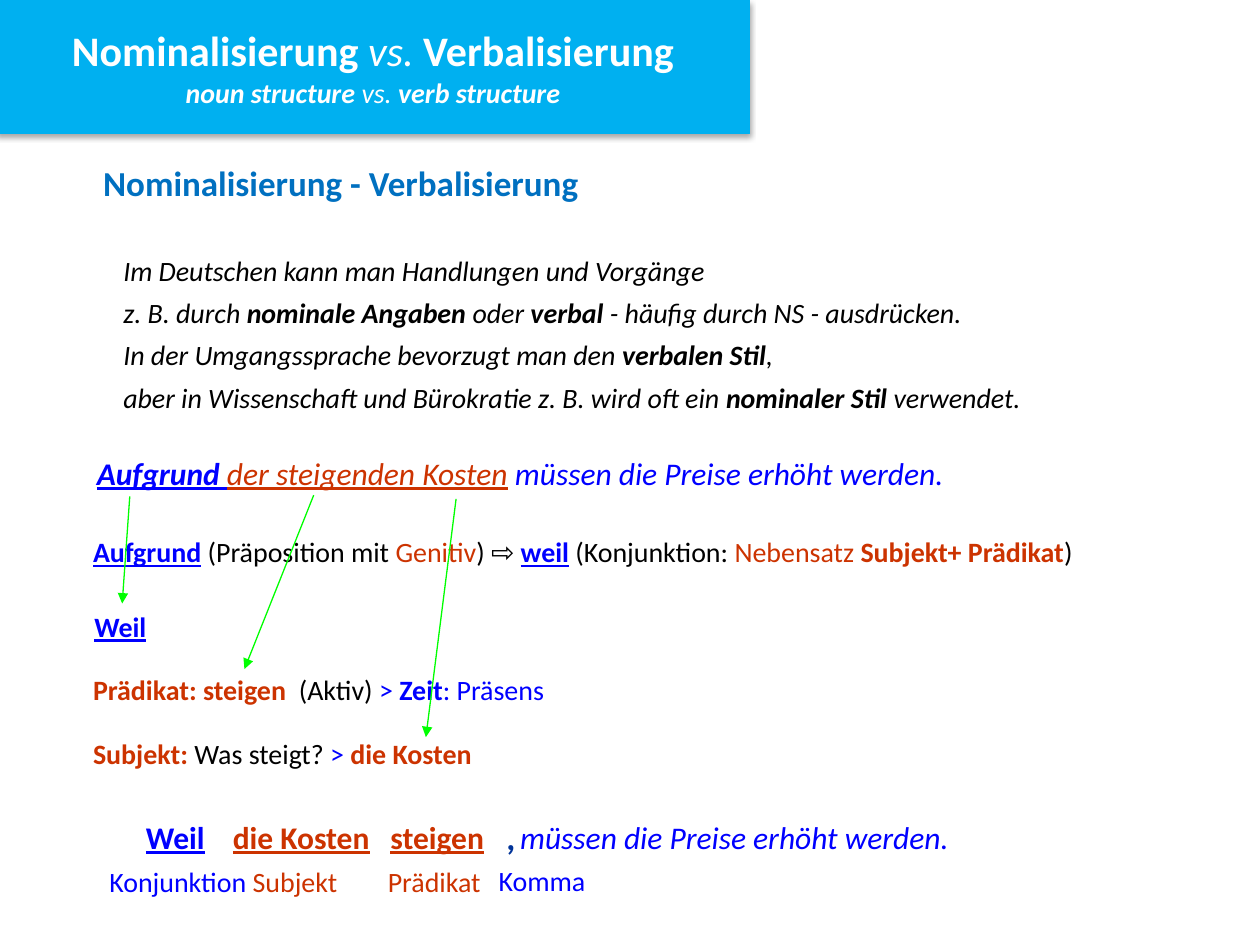
from lxml.etree import SubElement
from pptx import Presentation
from pptx.dml.color import RGBColor
from pptx.enum.shapes import MSO_CONNECTOR, MSO_SHAPE
from pptx.enum.text import MSO_ANCHOR, MSO_AUTO_SIZE, PP_ALIGN
from pptx.oxml.ns import qn
from pptx.util import Inches, Pt

BLUE, RUST, BLACK, WHITE = "0000FF", "CC3300", "000000", "FFFFFF"
SKY, HEADING, NAVY, GREEN = "00B0F0", "0070C0", "003399", "00FF00"


def rgb(value):
    return RGBColor.from_string(value)


def style(font, colour=None, flags=""):
    if colour:
        font.color.rgb = rgb(colour)
    if "b" in flags:
        font.bold = True
    if "i" in flags:
        font.italic = True
    if "u" in flags:
        font.underline = True


def write(paragraph, runs, size, colour=None, flags="", align=PP_ALIGN.JUSTIFY, spacing=Pt(24), tabs=()):
    paragraph.alignment = align
    if spacing:
        paragraph.line_spacing = spacing
    if tabs:
        properties = paragraph._p.get_or_add_pPr()
        tab_list = SubElement(properties, qn("a:tabLst"))
        for position in tabs:
            SubElement(tab_list, qn("a:tab"), pos=str(Inches(position)), algn="l")
    paragraph.font.name = "Calibri"
    paragraph.font.size = Pt(size)
    style(paragraph.font, colour, flags)
    for text, *look in runs:
        run = paragraph.add_run()
        run.text = text
        style(run.font, *look)


def add_frame(slide, box):
    frame = slide.shapes.add_textbox(*map(Inches, box)).text_frame
    frame.word_wrap = True
    frame.auto_size = MSO_AUTO_SIZE.SHAPE_TO_FIT_TEXT
    return frame


def add_line(slide, box, runs, size=16, **look):
    write(add_frame(slide, box).paragraphs[0], runs, size, **look)


def add_banner(slide, box):
    banner = slide.shapes.add_shape(MSO_SHAPE.RECTANGLE, *map(Inches, box))
    banner.shadow.inherit = False
    banner.fill.solid()
    banner.fill.fore_color.rgb = rgb(SKY)
    banner.line.color.rgb = rgb(SKY)
    banner.line.width = Pt(0.75)
    effects = banner._element.spPr.find(qn("a:effectLst"))
    shadow = SubElement(effects, qn("a:outerShdw"), blurRad=str(Pt(3.1)), dist=str(Pt(1.8)),
                        dir="5400000", rotWithShape="0")
    tint = SubElement(shadow, qn("a:srgbClr"), val=BLACK)
    SubElement(tint, qn("a:alpha"), val="35000")
    frame = banner.text_frame
    frame.vertical_anchor = MSO_ANCHOR.MIDDLE
    centred = {"colour": WHITE, "align": PP_ALIGN.CENTER, "spacing": None}
    write(frame.paragraphs[0],
          [("Nominalisierung ", None, "b"), ("vs.", None, "i"), (" Verbalisierung", None, "b")],
          24, **centred)
    write(frame.add_paragraph(),
          [("noun structure ", None, "b"), ("vs.",), (" verb structure", None, "b")],
          16, flags="i", **centred)


def add_introduction(slide, box):
    lines = [
        [("Im Deutschen kann man Handlungen und Vorgänge",)],
        [("z. B. durch ",), ("nominale Angaben", None, "b"), (" oder ",), ("verbal", None, "b"),
         (" - häufig durch NS - ausdrücken.",)],
        [("In der Umgangssprache bevorzugt man den ",), ("verbalen Stil", None, "b"), (",",)],
        [("aber in Wissenschaft und Bürokratie z. B. wird oft ein ",),
         ("nominaler Stil", None, "b"), (" verwendet.",)],
    ]
    frame = add_frame(slide, box)
    for index, runs in enumerate(lines):
        paragraph = frame.add_paragraph() if index else frame.paragraphs[0]
        write(paragraph, runs, 16, BLACK, "i")


def add_arrow(slide, start, end):
    arrow = slide.shapes.add_connector(MSO_CONNECTOR.STRAIGHT, *map(Inches, start + end))
    arrow.line.color.rgb = rgb(GREEN)
    arrow.line.width = Pt(0.75)
    SubElement(arrow.line._get_or_add_ln(), qn("a:tailEnd"), type="triangle")
    SubElement(arrow._element.spPr, qn("a:effectLst"))


def add_transformation(slide, box):
    left, top, width, height = box
    add_line(slide, (left + 0.03, top, 8.65, height),
             [("Aufgrund", BLUE, "bu"), (" ", BLUE, "u"), ("der steigenden Kosten", RUST, "u"),
              (" müssen die Preise erhöht werden.", BLUE)], 18, flags="i")
    add_line(slide, (left, top + 0.61, width, height),
             [("Aufgrund", BLUE, "bu"), (" (Präposition mit ", BLACK), ("Genitiv", RUST),
              (") ⇨ ", BLACK), ("weil", BLUE, "bu"), (" (Konjunktion: ", BLACK),
              ("Nebensatz ", RUST), ("Subjekt+ Prädikat", RUST, "b"), (")", BLACK)])
    add_line(slide, (left + 0.01, top + 1.2, 6.19, height), [("Weil",)], colour=BLUE, flags="bu")
    add_line(slide, (left, top + 1.7, 6.19, height),
             [("Prädikat: steigen ", RUST, "b"), (" (Aktiv)", BLACK), (" > ", BLUE),
              ("Zeit", BLUE, "b"), (": Präsens", BLUE)])
    add_line(slide, (left, top + 2.21, 6.19, height),
             [("Subjekt: ", RUST, "b"), ("Was steigt?", BLACK), (" > ", BLUE),
              ("die Kosten", RUST, "b")])
    for start, end in [((0.39, 0.42), (0.33, 1.27)),
                       ((1.85, 0.41), (1.3, 1.79)),
                       ((2.98, 0.44), (2.74, 2.33))]:
        add_arrow(slide, (left + start[0], top + start[1]), (left + end[0], top + end[1]))


def add_result(slide, box):
    left, top, width, height = box
    frame = add_frame(slide, box)
    write(frame.paragraphs[0],
          [("\t", BLUE), ("Weil", BLUE, "bu"), ("\t", BLACK, "u"),
           ("die Kosten\tsteigen", RUST, "bu"),
           ("\tmüssen die Preise erhöht werden.", BLUE, "i")],
          18, align=PP_ALIGN.LEFT, tabs=(0.34, 1.03, 2.28, 3.31))
    write(frame.add_paragraph(),
          [("\tKonjunktion ", BLUE), ("Subjekt\tPrädikat", RUST)],
          16, align=PP_ALIGN.LEFT, tabs=(0.05, 2.26))
    add_line(slide, (left + 3.2, top + 0.01, 0.26, 0.43), [(",",)], 20, colour=NAVY, flags="b")
    add_line(slide, (left + 3.14, top + 0.33, 0.97, 0.43), [("Komma",)], colour=BLUE)


def main():
    presentation = Presentation()
    presentation.slide_width = Inches(10)
    presentation.slide_height = Inches(7.5)
    slide = presentation.slides.add_slide(presentation.slide_layouts[6])
    add_line(slide, (0.72, 1.23, 8.45, 0.44), [("Nominalisierung - Verbalisierung",)], 20,
             colour=HEADING, flags="b", align=PP_ALIGN.LEFT, spacing=None)
    add_transformation(slide, (0.64, 3.52, 8.89, 0.44))
    add_result(slide, (0.72, 6.41, 8.06, 0.77))
    add_introduction(slide, (0.88, 1.9, 8.65, 1.43))
    add_banner(slide, (-0.03, 0, 5.98, 1.06))
    presentation.save("out.pptx")


if __name__ == "__main__":
    main()
